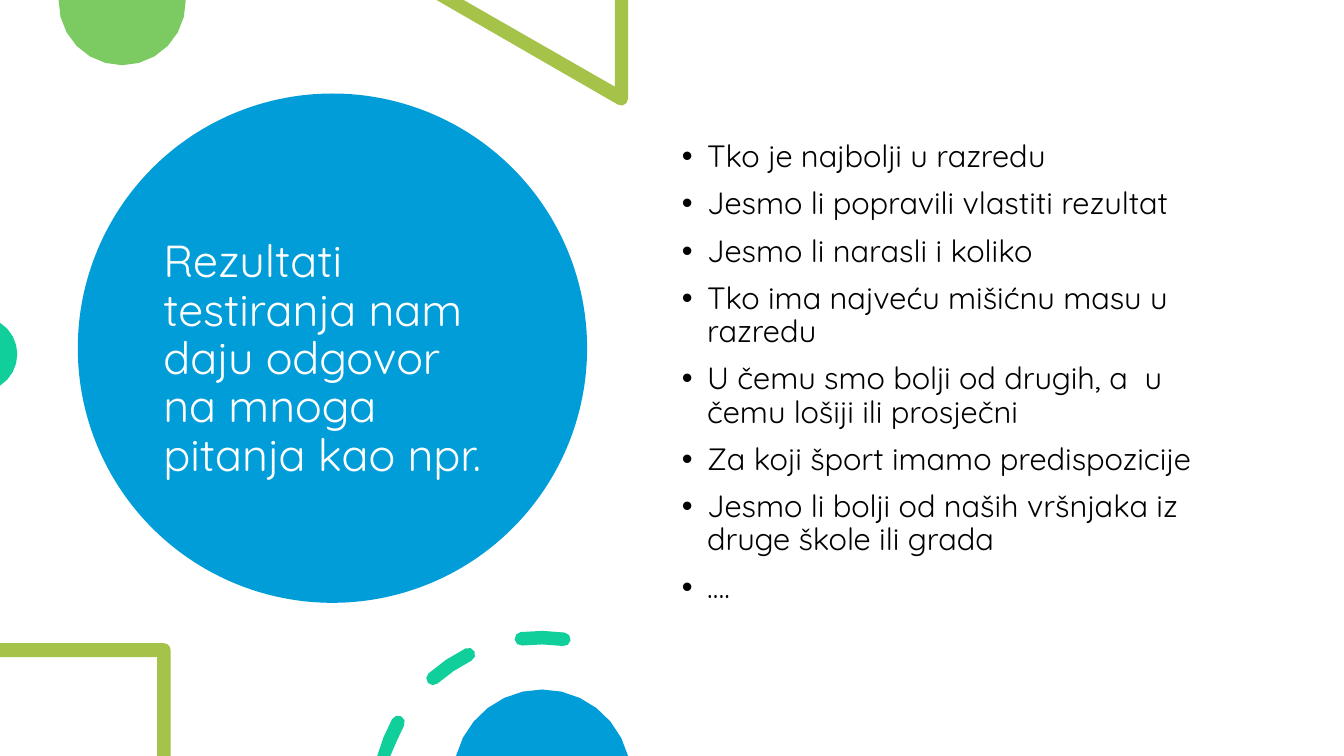
from dataclasses import dataclass
from math import cos, radians, sin

from lxml.etree import SubElement
from pptx import Presentation
from pptx.dml.color import RGBColor as RGB
from pptx.enum.shapes import MSO_SHAPE as SHAPE
from pptx.enum.text import MSO_ANCHOR as ANCHOR
from pptx.oxml.ns import qn
from pptx.util import Pt


@dataclass(frozen=True)
class Theme:
    """Colours, font and type sizes of the slide."""
    blue: str = "009DD9"
    teal: str = "10CF9B"
    green: str = "7CCA62"
    olive: str = "A5C249"
    white: str = "FFFFFF"
    black: str = "000000"
    font: str = "Quicksand"
    title: int = 32
    body: int = 22


THEME = Theme()
WIDTH, HEIGHT = 960, 540
TITLE = "Rezultati testiranja nam daju odgovor na mnoga pitanja kao npr."
QUESTIONS = [
    "Tko je najbolji u razredu",
    "Jesmo li popravili vlastiti rezultat",
    "Jesmo li narasli i koliko",
    "Tko ima najveću mišićnu masu u razredu",
    "U čemu smo bolji od drugih, a  u čemu lošiji ili prosječni",
    "Za koji šport imamo predispozicije",
    "Jesmo li bolji od naših vršnjaka iz druge škole ili grada",
    "….",
]


def arc(cx, cy, radius, start, end, steps):
    """Return points along an arc, with angles in degrees clockwise from the right."""
    angles = [radians(start + (end - start) * i / steps) for i in range(steps + 1)]
    return [(cx + radius * cos(a), cy + radius * sin(a)) for a in angles]


def dash(cx, cy, radius, thickness, start, end, round_start=True):
    """Return the outline of a thick arc with round ends, cut at the slide's foot."""
    half = thickness / 2
    head, tail = arc(cx, cy, radius, start, end, 1)
    points = arc(cx, cy, radius + half, start, end, 2)
    points += arc(*tail, half, end, end + 180, 4)[1:-1]
    points += arc(cx, cy, radius - half, end, start, 2)
    if round_start:
        points += arc(*head, half, start + 180, start + 360, 4)[1:-1]
    return [(x, min(y, HEIGHT)) for x, y in points]


def paint(sp, color):
    """Give a shape a plain fill without line or shadow."""
    sp.fill.solid()
    sp.fill.fore_color.rgb = RGB.from_string(color)
    sp.line.fill.background()
    sp.shadow.inherit = False


def add_outline(s, color, *contours):
    """Draw closed contours as one filled freeform."""
    contours = [[(Pt(x), Pt(y)) for x, y in contour] for contour in contours]
    builder = s.shapes.build_freeform(*contours[0][0])
    for i, (first, *rest) in enumerate(contours):
        if i:
            builder.move_to(*first)
        builder.add_line_segments(rest, close=True)
    paint(builder.convert_to_shape(), color)


def add_preset(s, kind, box, color):
    """Draw a filled preset shape."""
    paint(s.shapes.add_shape(kind, *map(Pt, box)), color)


def add_bullet(p, indent):
    """Give a paragraph a hanging round bullet."""
    pPr = p._p.get_or_add_pPr()
    pPr.set("marL", str(Pt(indent)))
    pPr.set("indent", str(-Pt(indent)))
    SubElement(pPr, qn("a:buFont")).set("typeface", "Arial")
    SubElement(pPr, qn("a:buChar")).set("char", "•")


def add_text(s, lines, box, *, size, color, anchor=ANCHOR.TOP, before=0, indent=0):
    """Add a wrapped text box with one paragraph per line."""
    tf = s.shapes.add_textbox(*map(Pt, box)).text_frame
    tf.word_wrap = True
    tf.vertical_anchor = anchor
    for i, line in enumerate(lines):
        p = tf.add_paragraph() if i else tf.paragraphs[0]
        p.line_spacing = 0.9
        p.space_before = Pt(before)
        if indent:
            add_bullet(p, indent)
        r = p.add_run()
        r.text = line
        r.font.name = THEME.font
        r.font.size = Pt(size)
        r.font.color.rgb = RGB.from_string(color)


def add_top_shapes(s):
    """Draw the shapes cropped by the top and left edges."""
    add_outline(s, THEME.green, arc(87.3, 1.2, 45.4, -1.5, 181.5, 12))
    add_outline(s, THEME.olive, [
        (448.6, 0), (439.2, 0), (439.2, 61.9), (331.2, 0), (311.8, 0),
        *arc(443.8, 70.6, 4.8, 120, 0, 3)])
    add_outline(s, THEME.teal, arc(-14.2, 253, 26.6, -57.5, 57.5, 8))


def add_bottom_shapes(s):
    """Draw the shapes cropped by the bottom edge."""
    add_outline(s, THEME.olive, [
        (0, 459.4), *arc(117, 464.2, 4.8, -90, 0, 3), (121.8, HEIGHT),
        (112.3, HEIGHT), (112.3, 469.4), (0, 469.4)])
    ring = (386.2, 571.5, 116, 9.7)
    add_outline(s, THEME.teal,
                dash(*ring, 195, 208.6, round_start=False),
                dash(*ring, 228.5, 243.6),
                dash(*ring, 263.2, 278.2))
    add_outline(s, THEME.blue, arc(387.2, 556, 63.5, 194.6, 345.4, 12))


def main():
    """Build and save the slide."""
    prs = Presentation()
    prs.slide_width, prs.slide_height = Pt(WIDTH), Pt(HEIGHT)
    s = prs.slides.add_slide(prs.slide_layouts[6])
    add_preset(s, SHAPE.RECTANGLE, (0, 0, WIDTH, HEIGHT), THEME.white)
    add_preset(s, SHAPE.OVAL, (55.6, 66.8, 363.8, 363.8), THEME.blue)
    add_text(s, [TITLE], (109.6, 96.9, 255, 320.4), size=THEME.title,
             color=THEME.white, anchor=ANCHOR.MIDDLE)
    add_top_shapes(s)
    add_text(s, QUESTIONS, (480, 97.2, 414, 402.5), size=THEME.body,
             color=THEME.black, before=10, indent=18)
    add_bottom_shapes(s)
    prs.save("out.pptx")


if __name__ == "__main__":
    main()
